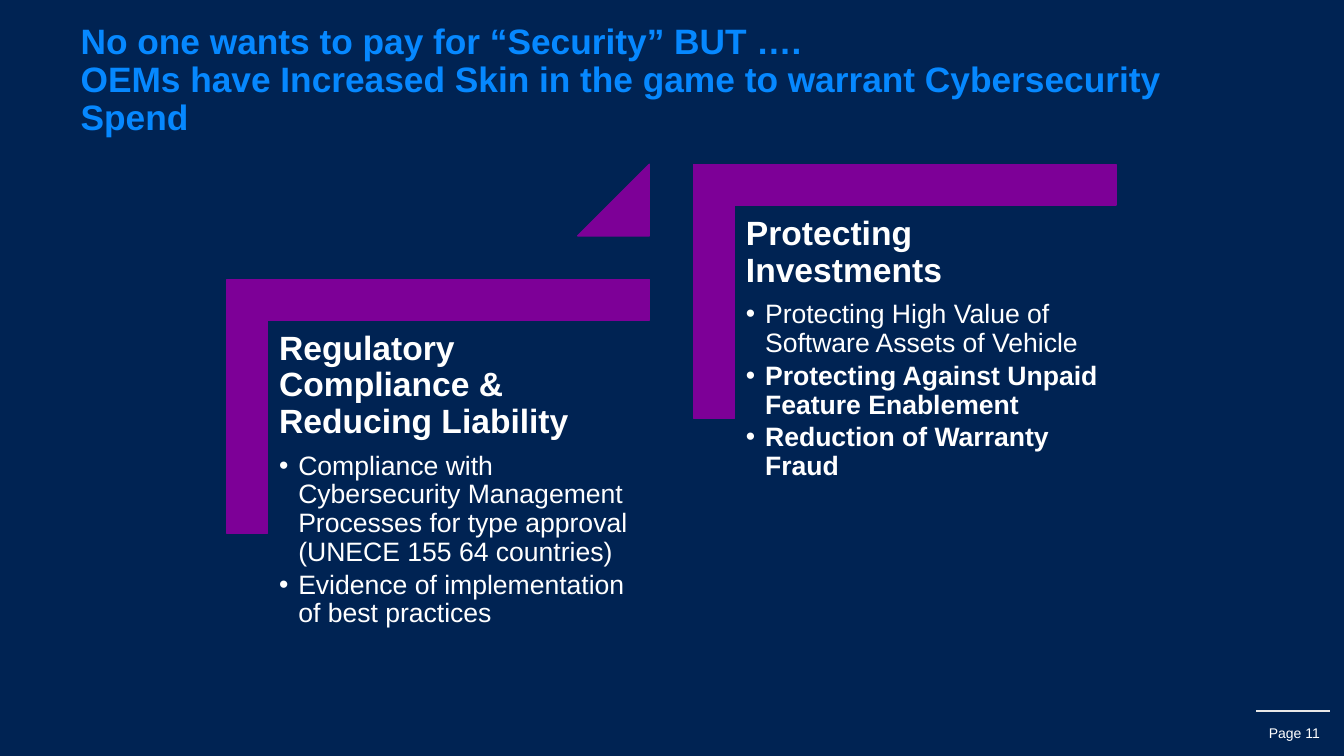
from lxml import etree
from pptx import Presentation
from pptx.dml.color import RGBColor
from pptx.enum.shapes import MSO_CONNECTOR as Connector, MSO_SHAPE as Shape
from pptx.enum.text import PP_ALIGN as Align
from pptx.oxml.ns import qn
from pptx.util import Inches, Pt

COLORS = {
    "navy": "002353",
    "blue": "0688FF",
    "purple": "7D0097",
    "white": "FFFFFF",
    "rule": "E8E7E7",
}
WIDTH, HEIGHT = 13.33, 7.5
STEP_W, STEP_H = 4.19, 2.52
BAND = 0.42
RISE = 1.14
STEP_GAP = 4.63
ARROW = 0.71
FIRST_LEFT, FIRST_TOP = 2.25, 2.77

STEPS = [
    ("Regulatory Compliance & Reducing Liability", [
        ("Compliance with Cybersecurity Management Processes "
         "for type approval (UNECE 155 64 countries)", False),
        ("Evidence of implementation of best practices", False),
    ]),
    ("Protecting Investments", [
        ("Protecting High Value of Software Assets of Vehicle", False),
        ("Protecting Against Unpaid Feature Enablement", True),
        ("Reduction of Warranty Fraud", True),
    ]),
]


def rgb(name):
    return RGBColor.from_string(COLORS[name])


def style(paragraph, size, color, bold=False):
    font = paragraph.font
    font.name, font.size, font.bold = "Arial", Pt(size), bold
    font.color.rgb = rgb(color)


def add_text_frame(slide, left, top, width, height, inset=0):
    box = slide.shapes.add_textbox(*map(Inches, (left, top, width, height)))
    frame = box.text_frame
    frame.word_wrap = True
    frame.margin_left = frame.margin_right = Inches(inset)
    frame.margin_top = frame.margin_bottom = Inches(inset)
    return frame


def add_purple(slide, preset, left, top, width, height, adjustments):
    part = slide.shapes.add_shape(preset, *map(Inches, (left, top, width, height)))
    for index, value in enumerate(adjustments):
        part.adjustments[index] = value
    part.shadow.inherit = False
    part.fill.solid()
    part.fill.fore_color.rgb = rgb("purple")
    part.line.color.rgb = rgb("purple")
    part.line.width = Pt(1)
    return part


def add_bullet(paragraph):
    properties = paragraph._p.get_or_add_pPr()
    properties.set("marL", str(Inches(0.19)))
    properties.set("indent", str(-Inches(0.19)))
    etree.SubElement(properties, qn("a:buFont"), typeface="Arial")
    etree.SubElement(properties, qn("a:buChar"), char="•")


def add_title(slide, left, top, width, height):
    title = add_text_frame(slide, left, top, width, height).paragraphs[0]
    title.text = ("No one wants to pay for “Security” BUT ….\v"
                  "OEMs have Increased Skin in the game to warrant Cybersecurity Spend")
    title.line_spacing = 0.9
    style(title, 25.2, "blue", True)


def add_step(slide, left, top, heading, points):
    corner = add_purple(slide, Shape.CORNER,
                        left + (STEP_W - STEP_H) / 2, top - (STEP_W - STEP_H) / 2,
                        STEP_H, STEP_W, (0.161, 0.161))
    corner.rotation = 90
    frame = add_text_frame(slide, left + BAND, top + BAND, 3.78, 3.32, 0.1)
    title = frame.paragraphs[0]
    title.text = heading
    title.line_spacing = 0.9
    title.space_after = Pt(8.4)
    style(title, 24, "white", True)
    for text, bold in points:
        point = frame.add_paragraph()
        point.text = text
        add_bullet(point)
        point.level = 1
        point.line_spacing = 0.9
        point.space_after = Pt(2.85)
        style(point, 19, "white", bold)


def add_staircase(slide, left, top):
    for index, (heading, points) in enumerate(STEPS):
        step_left, step_top = left + index * STEP_GAP, top - index * RISE
        add_step(slide, step_left, step_top, heading, points)
        if index < len(STEPS) - 1:
            add_purple(slide, Shape.ISOSCELES_TRIANGLE,
                       step_left + STEP_W - ARROW, step_top - RISE,
                       ARROW, ARROW, (1,))


def add_footer(slide, left, top, width):
    rule = slide.shapes.add_connector(
        Connector.STRAIGHT, *map(Inches, (left, top, left + width, top)))
    rule.line.color.rgb = rgb("rule")
    rule.line.width = Pt(1.5)
    etree.SubElement(rule._element.spPr, qn("a:effectLst"))
    page = add_text_frame(slide, left - 0.24, top + 0.14, 0.87, 0.2).paragraphs[0]
    page.text = "Page 11"
    page.alignment = Align.RIGHT
    style(page, 10, "white")


def main():
    deck = Presentation()
    deck.slide_width, deck.slide_height = Inches(WIDTH), Inches(HEIGHT)
    slide = deck.slides.add_slide(deck.slide_layouts[6])
    slide.background.fill.solid()
    slide.background.fill.fore_color.rgb = rgb("navy")
    add_footer(slide, WIDTH - 0.87, HEIGHT * 0.94, 0.73)
    add_title(slide, WIDTH * 0.06, 0.24, WIDTH * 0.88, 0.45)
    add_staircase(slide, FIRST_LEFT, FIRST_TOP)
    deck.save("out.pptx")


if __name__ == "__main__":
    main()
